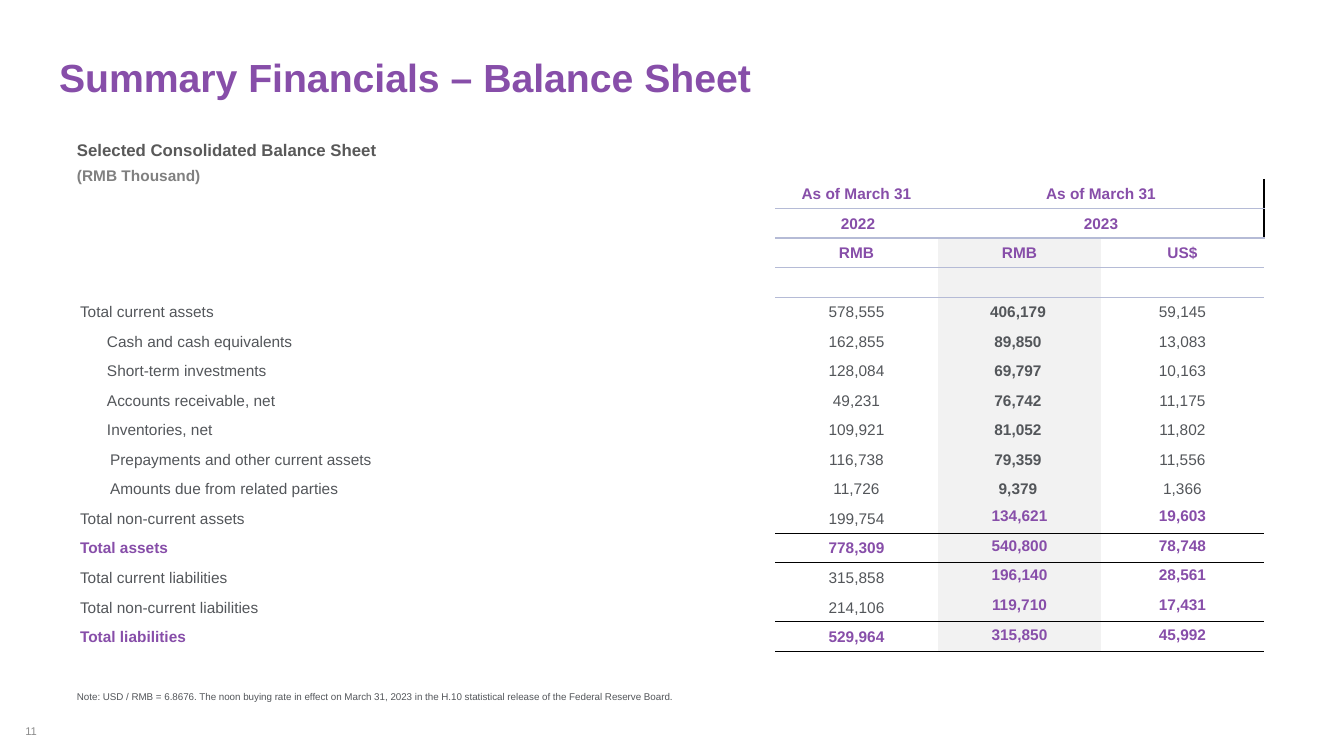
"""Build the balance sheet summary slide."""
from lxml.etree import SubElement
from pptx import Presentation
from pptx.dml.color import RGBColor
from pptx.enum.text import MSO_ANCHOR as Anchor, PP_ALIGN as Align
from pptx.oxml.ns import qn
from pptx.util import Pt

PX = 9071
FONT = "Arial"
NO_GRID_STYLE = "{2D5ABB26-0587-4C30-8999-92F81FD0307C}"
COLORS = {
    "purple": "874EA9", "ink": "53565A", "heading": "595959", "unit": "808080",
    "page": "8C8C8C", "shade": "F2F2F2", "lilac": "B5BBD6", "black": "000000",
}

TEXTS = [
    ("Selected Consolidated Balance Sheet", (77, 140, 343, 20), 12, "heading", True),
    ("(RMB Thousand)", (77, 166, 139, 19), 11, "unit", True),
    ("Note: USD / RMB = 6.8676. The noon buying rate in effect on March 31, 2023 "
     "in the H.10 statistical release of the Federal Reserve Board.",
     (77, 691, 924, 12), 7, "ink", False),
    ("Summary Financials – Balance Sheet", (59, 53, 1242, 47), 28, "purple", True),
]
PAGE_NUMBER = ("11", (0, 725, 37, 12), 8, "page", False)

HEADERS = [
    ("", "As of March 31", "As of March 31", ""),
    ("", "2022", "2023", ""),
    ("", "RMB", "RMB", "US$"),
    ("", "", "", ""),
]
ITEMS = [
    ("Total current assets", "578,555", "406,179", "59,145"),
    ("Cash and cash equivalents", "162,855", "89,850", "13,083"),
    ("Short-term investments", "128,084", "69,797", "10,163"),
    ("Accounts receivable, net", "49,231", "76,742", "11,175"),
    ("Inventories, net", "109,921", "81,052", "11,802"),
    ("Prepayments and other current assets", "116,738", "79,359", "11,556"),
    ("Amounts due from related parties", "11,726", "9,379", "1,366"),
    ("Total non-current assets", "199,754", "134,621", "19,603"),
    ("Total assets", "778,309", "540,800", "78,748"),
    ("Total current liabilities", "315,858", "196,140", "28,561"),
    ("Total non-current liabilities", "214,106", "119,710", "17,431"),
    ("Total liabilities", "529,964", "315,850", "45,992"),
]
ROWS = HEADERS + ITEMS
INDENTS = {5: 28, 6: 28, 7: 28, 8: 28, 9: 31, 10: 31}
TOTALS = ("Total assets", "Total liabilities")
RULES = {0: "lilac", 1: "lilac", 2: "lilac", 11: "black", 14: "black", 15: "black"}
FIRST_ITEM, FIRST_HIGHLIGHT, FIRST_SHADED = 4, 11, 2
TABLE_LEFT, TABLE_TOP, TABLE_HEIGHT = 79, 179, 473
COLUMNS = (696, 163, 163, 163)


def style(paragraph, size, color, bold):
    for run in paragraph.runs:
        run.font.name = FONT
        run.font.size = Pt(size)
        run.font.bold = bold
        run.font.color.rgb = RGBColor.from_string(COLORS[color])


def add_text(slide, text, place, size, color, bold):
    box = slide.shapes.add_textbox(*(n * PX for n in place))
    frame = box.text_frame
    frame.word_wrap = True
    frame.margin_left = frame.margin_right = frame.margin_top = frame.margin_bottom = 0
    frame.text = text
    style(frame.paragraphs[0], size, color, bold)
    return frame


def add_border(cell, side, color):
    line = SubElement(cell._tc.get_or_add_tcPr(), qn(f"a:ln{side}"), w=str(Pt(1)))
    SubElement(SubElement(line, qn("a:solidFill")), qn("a:srgbClr"), val=COLORS[color])


def look(row, column):
    """Return the colour and weight of the text in a table cell."""
    if row < FIRST_ITEM or (row >= FIRST_HIGHLIGHT and column >= 2):
        return "purple", True
    if ROWS[row][0] in TOTALS:
        return "purple", True
    return "ink", column == 2


def fill_cell(cell, row, column):
    text = ROWS[row][column]
    cell.text = text
    cell.vertical_anchor = Anchor.MIDDLE
    highlighted = row >= FIRST_HIGHLIGHT and column >= 2
    cell.margin_left = (INDENTS.get(row, 1) if column == 0 else 4 if text == "2022" else 1) * PX
    cell.margin_right = (4 if column == 2 and FIRST_ITEM <= row < FIRST_HIGHLIGHT else 1) * PX
    cell.margin_top = PX
    cell.margin_bottom = 5 * PX if highlighted else 0
    paragraph = cell.text_frame.paragraphs[0]
    paragraph.alignment = Align.CENTER if column else Align.LEFT
    style(paragraph, 11, *look(row, column))
    if not text:
        SubElement(paragraph._p, qn("a:endParaRPr"), sz="1100")
    if column:
        if row < 2 and column >= 2:
            add_border(cell, "R", "black")
        if row - 1 in RULES:
            add_border(cell, "T", RULES[row - 1])
        if row in RULES:
            add_border(cell, "B", RULES[row])
    if column == 2 and row >= FIRST_SHADED:
        cell.fill.solid()
        cell.fill.fore_color.rgb = RGBColor.from_string(COLORS["shade"])
    else:
        cell.fill.background()


def add_balance_sheet(slide):
    place = (TABLE_LEFT, TABLE_TOP, sum(COLUMNS), TABLE_HEIGHT)
    table = slide.shapes.add_table(len(ROWS), len(COLUMNS), *(n * PX for n in place)).table
    table.first_row = table.horz_banding = False
    table._tbl.tblPr.find(qn("a:tableStyleId")).text = NO_GRID_STYLE
    for column, width in zip(table.columns, COLUMNS):
        column.width = width * PX
    for row in table.rows:
        row.height = TABLE_HEIGHT * PX // len(ROWS)
    for row in range(len(ROWS)):
        for column in range(len(COLUMNS)):
            fill_cell(table.cell(row, column), row, column)
    for row in range(2):
        table.cell(row, 2).merge(table.cell(row, 3))


def main():
    deck = Presentation()
    deck.slide_width, deck.slide_height = 1344 * PX, 756 * PX
    slide = deck.slides.add_slide(deck.slide_layouts[6])
    add_balance_sheet(slide)
    for entry in TEXTS:
        add_text(slide, *entry)
    page = add_text(slide, *PAGE_NUMBER)
    page.vertical_anchor = Anchor.MIDDLE
    page.paragraphs[0].alignment = Align.RIGHT
    deck.save("out.pptx")


if __name__ == "__main__":
    main()
